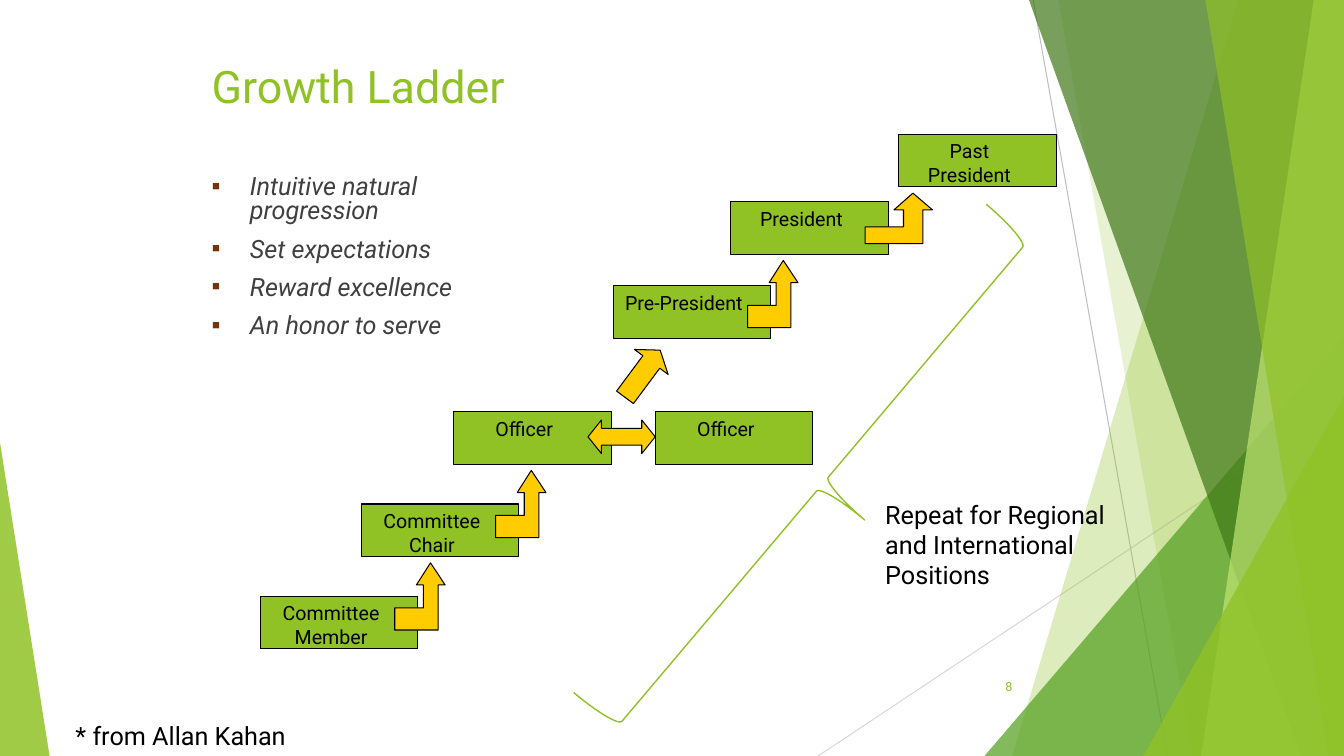
from lxml.etree import SubElement
from pptx import Presentation
from pptx.dml.color import RGBColor
from pptx.enum.shapes import MSO_CONNECTOR, MSO_SHAPE
from pptx.enum.text import MSO_ANCHOR, MSO_AUTO_SIZE, PP_ALIGN
from pptx.oxml.ns import qn
from pptx.util import Inches, Pt

COLUMNS, ROWS = 160, 90
UNIT = Inches(1) / 12
FONT = "Roboto"

BLACK = RGBColor(0x00, 0x00, 0x00)
CHARCOAL = RGBColor(0x3F, 0x3F, 0x3F)
LIGHT_GRAY = RGBColor(0xD8, 0xD8, 0xD8)
GRAY = RGBColor(0xBF, 0xBF, 0xBF)
LIME = RGBColor(0x90, 0xC2, 0x26)
PALE_LIME = RGBColor(0xBF, 0xE4, 0x71)
GREEN = RGBColor(0x54, 0xA0, 0x21)
DARK_GREEN = RGBColor(0x3F, 0x78, 0x18)
GOLD = RGBColor(0xFF, 0xCC, 0x00)
BROWN = RGBColor(0x73, 0x33, 0x0B)

TITLE = "Growth Ladder"
BENEFITS = ["Intuitive natural progression", "Set expectations",
            "Reward excellence", "An honor to serve"]
STEPS = [
    (31, 71, ["Committee Member"]),
    (43, 60, ["Committee Chair"]),
    (78, 49, ["Officer"]),
    (54, 49, ["Officer"]),
    (73, 34, ["Pre-President"]),
    (87, 24, ["President"]),
    (107, 16, ["Past", "President"]),
]
STEP_SIZE = (18.75, 6.25)
BENT_ARROWS = [(47, 67, 6, 8), (59, 56, 6, 8), (89, 31, 6, 8), (103, 23, 8, 6)]
BENT_OUTLINE = [(0.71, 0), (0.43, 0.33), (0.57, 0.33), (0.57, 0.67), (0, 0.67),
                (0, 1), (0.86, 1), (0.86, 0.33), (1, 0.33)]
STRAIGHT_ARROWS = [
    (MSO_SHAPE.LEFT_RIGHT_ARROW, (70, 50, 8, 4), 0, (0.5, 0.4)),
    (MSO_SHAPE.RIGHT_ARROW, (73, 42, 7, 5), 306.6, (0.5, 0.35)),
]
BACKDROP_LINES = [((123, 0), (139, ROWS), GRAY), ((COLUMNS, 48.4), (97.4, ROWS), LIGHT_GRAY)]
BACKDROP_PANELS = [
    (147.4, 0, 120.5, LIME, 30),
    (126, 0, 142, LIME, 20),
    (COLUMNS, 40, 117.2, GREEN, 72),
    (122.5, 0, 154.9, DARK_GREEN, 70),
    (156.4, 0, 143, PALE_LIME, 70),
    (143.5, 0, 158.2, LIME, 65),
    (COLUMNS, 47.2, 136.1, LIME, 80),
]
LEFT_WEDGE = (0, 52.7, 5.9, 37.3)
BRACE = (91.3, 19.6, 13.2, 76.1)
NOTES = [
    ("* from Allan Kahan", (7.8, 85.2, 31.8, 4.8), {}),
    ("Repeat for Regional and International Positions", (104.2, 58.8, 29.3, 12.1), {}),
    ("8", (112.7, 79.3, 9, 4.8),
     {"size": 9, "color": LIME, "align": PP_ALIGN.RIGHT, "anchor": MSO_ANCHOR.MIDDLE}),
]


def grid(*cells):
    return [round(cell * UNIT) for cell in cells]


def write_text(shape, lines, size=18, color=BLACK, italic=False, align=PP_ALIGN.LEFT,
               anchor=MSO_ANCHOR.TOP, left=0.1, right=0.1, spacing=1, before=0):
    frame = shape.text_frame
    frame.text = "\n".join(lines)
    frame.word_wrap = True
    frame.auto_size = MSO_AUTO_SIZE.NONE
    frame.vertical_anchor = anchor
    frame.margin_left, frame.margin_right = Inches(left), Inches(right)
    frame.margin_top = frame.margin_bottom = Inches(0.05)
    for index, paragraph in enumerate(frame.paragraphs):
        paragraph.alignment = align
        paragraph.line_spacing = spacing
        paragraph.space_before = Pt(before if index else 0)
        font = paragraph.runs[0].font
        font.name, font.size, font.italic = FONT, Pt(size), italic
        font.color.rgb = color


def add_bullet(paragraph):
    properties = paragraph._p.get_or_add_pPr()
    indent = Inches(0.38)
    properties.set("marL", str(indent))
    properties.set("indent", str(-indent))
    color = SubElement(properties, qn("a:buClr"))
    SubElement(color, qn("a:srgbClr"), val=str(BROWN))
    SubElement(properties, qn("a:buChar"), char="▪")


def paint(shape, fill, line=None, opacity=100):
    shape.shadow.inherit = False
    shape.fill.solid()
    shape.fill.fore_color.rgb = fill
    if opacity < 100:
        color = shape.fill._xPr.find(qn("a:solidFill"))[0]
        SubElement(color, qn("a:alpha"), val=str(opacity * 1000))
    if line is None:
        shape.line.fill.background()
    else:
        shape.line.color.rgb = line
        shape.line.width = Pt(0.75)


def add_polygon(shapes, points):
    corners = [grid(*point) for point in points]
    builder = shapes.build_freeform(*corners[0], scale=1.0)
    builder.add_line_segments(corners[1:], close=True)
    return builder.convert_to_shape()


def add_triangle(shapes, box, apex):
    triangle = shapes.add_shape(MSO_SHAPE.ISOSCELES_TRIANGLE, *grid(*box))
    triangle.adjustments[0] = apex
    return triangle


def draw_backdrop(shapes):
    for start, end, color in BACKDROP_LINES:
        line = shapes.add_connector(MSO_CONNECTOR.STRAIGHT, *grid(*start, *end))
        line.line.color.rgb = color
        line.line.width = Pt(0.75)
        SubElement(line._element.spPr, qn("a:effectLst"))
    for top_x, top_y, bottom_x, color, opacity in BACKDROP_PANELS:
        if top_x == COLUMNS:
            box = (bottom_x, top_y, COLUMNS - bottom_x, ROWS - top_y)
            panel = add_triangle(shapes, box, 1)
        else:
            panel = add_polygon(shapes, [(top_x, top_y), (COLUMNS, top_y),
                                         (COLUMNS, ROWS), (bottom_x, ROWS)])
        paint(panel, color, opacity=opacity)
    paint(add_triangle(shapes, LEFT_WEDGE, 0), LIME, opacity=85)


def place(shape, box):
    shape.left, shape.top, shape.width, shape.height = grid(*box)


def draw_text(slide):
    title, body = slide.shapes.title, slide.placeholders[1]
    place(title, (24, 6.4, 114, 11))
    write_text(title, [TITLE], size=32, color=LIME)
    place(body, (24, 20.4, 34, 21.6))
    write_text(body, BENEFITS, color=CHARCOAL, italic=True, spacing=0.8, before=10)
    for paragraph in body.text_frame.paragraphs:
        add_bullet(paragraph)
    for text, box, style in NOTES:
        write_text(slide.shapes.add_textbox(*grid(*box)), [text], **style)


def draw_ladder(shapes):
    for column, row, lines in STEPS:
        step = shapes.add_shape(MSO_SHAPE.RECTANGLE, *grid(column, row, *STEP_SIZE))
        paint(step, LIME, BLACK)
        write_text(step, lines, size=14, align=PP_ALIGN.CENTER, left=0.02, right=0.18)
    for column, row, width, height in BENT_ARROWS:
        points = [(column + x * width, row + y * height) for x, y in BENT_OUTLINE]
        paint(add_polygon(shapes, points), GOLD, BLACK)
    for kind, box, rotation, adjustments in STRAIGHT_ARROWS:
        arrow = shapes.add_shape(kind, *grid(*box))
        arrow.rotation = rotation
        arrow.adjustments[0], arrow.adjustments[1] = adjustments
        paint(arrow, GOLD, BLACK)
    brace = shapes.add_shape(MSO_SHAPE.RIGHT_BRACE, *grid(*BRACE))
    brace.rotation = 40.2
    brace.adjustments[0], brace.adjustments[1] = 0.083, 0.5
    brace.shadow.inherit = False
    brace.fill.background()
    brace.line.color.rgb = LIME
    brace.line.width = Pt(1)


def main():
    presentation = Presentation()
    presentation.slide_width, presentation.slide_height = grid(COLUMNS, ROWS)
    slide = presentation.slides.add_slide(presentation.slide_layouts[1])
    draw_backdrop(slide.shapes)
    draw_ladder(slide.shapes)
    draw_text(slide)
    presentation.save("out.pptx")


if __name__ == "__main__":
    main()
